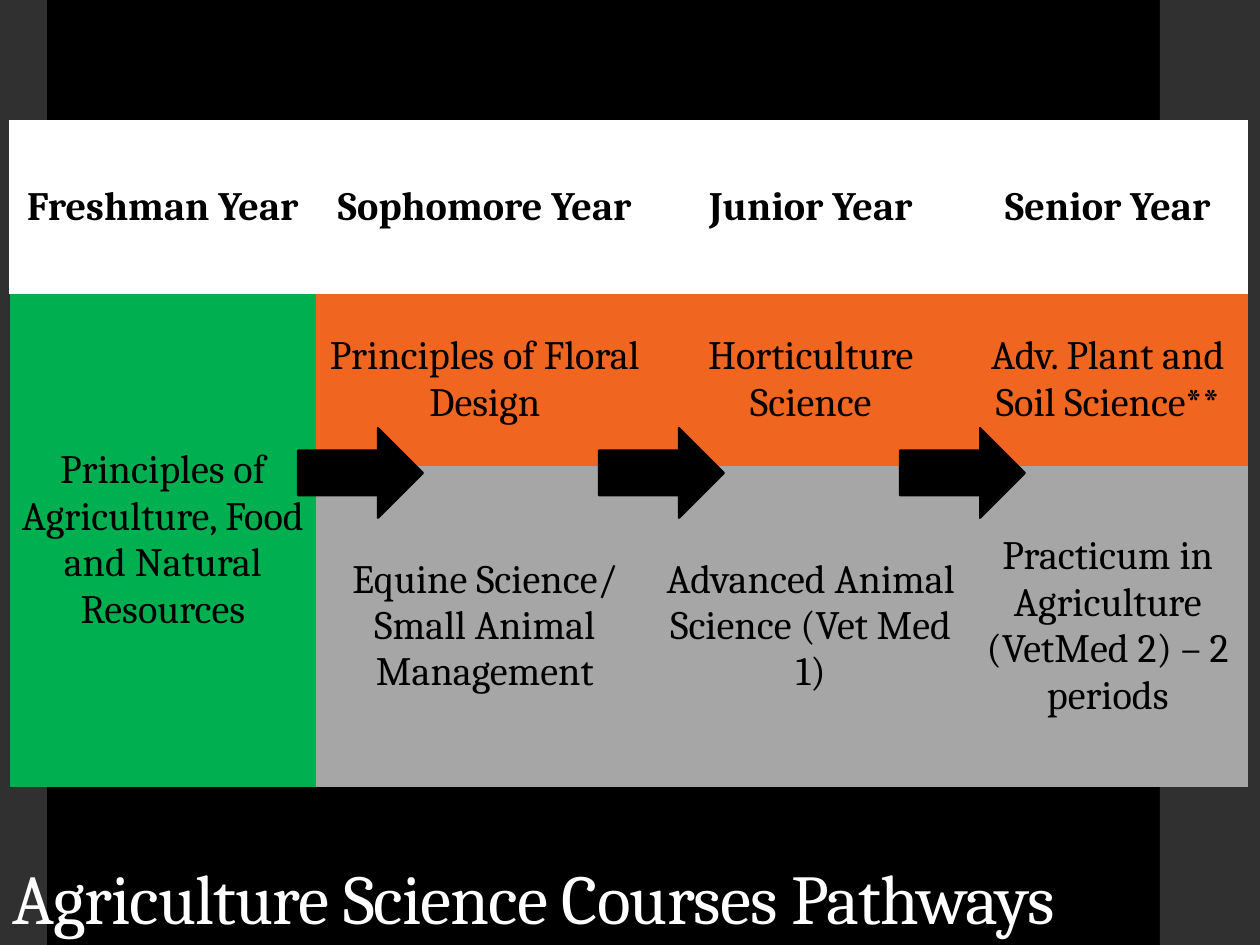
from dataclasses import dataclass

import lxml.etree
import pptx
import pptx.dml.color
import pptx.enum.shapes
import pptx.enum.text
import pptx.oxml.ns
import pptx.util

SCALE = 914400 / 126
SHAPE = pptx.enum.shapes.MSO_SHAPE
ALIGN = pptx.enum.text.PP_ALIGN
ANCHOR = pptx.enum.text.MSO_ANCHOR
NO_STYLE = "{2D5ABB26-0587-4C30-8999-92F81FD0307C}"

WHITE, BLACK, DARK = "FFFFFF", "000000", "303030"
GREEN, ORANGE, GRAY = "00B050", "F06621", "A6A6A6"


@dataclass
class Box:
    left: int
    top: int
    width: int
    height: int


@dataclass
class Row:
    height: int
    fill: str
    texts: list[str]
    bold: bool = False


COLS = [306, 338, 314, 280]
ROWS = [
    Row(173, WHITE, ["Freshman Year", "Sophomore Year", "Junior Year", "Senior Year"], True),
    Row(172, ORANGE, ["Principles of Agriculture, Food and Natural Resources",
                      "Principles of Floral Design", "Horticulture Science",
                      "Adv. Plant and Soil Science**"]),
    Row(321, GRAY, ["", "Equine Science/ Small Animal Management",
                    "Advanced Animal Science (Vet Med 1)",
                    "Practicum in Agriculture (VetMed 2) – 2 periods"]),
]
BARS = [Box(1160, 0, 101, 945), Box(1166, 0, 94, 945), Box(0, 0, 47, 945)]
ARROWS = [Box(298 + 301 * i, 428, 125, 90) for i in range(3)]


def px(n: int) -> pptx.util.Emu:
    return pptx.util.Emu(round(n * SCALE))


def place(box: Box) -> list[pptx.util.Emu]:
    return [px(n) for n in (box.left, box.top, box.width, box.height)]


def paint(fill, color: str) -> None:
    fill.solid()
    fill.fore_color.rgb = pptx.dml.color.RGBColor.from_string(color)


def write(frame, text: str, *, size: int, color: str = BLACK, bold: bool = False,
          align=ALIGN.LEFT, space: float = 1.0, track: int = 0) -> None:
    """Fill a frame with one run; track is in hundredths of a point."""
    frame.word_wrap = True
    par = frame.paragraphs[0]
    par.alignment = align
    par.line_spacing = space
    run = par.add_run()
    run.text = text
    font = run.font
    font.name, font.size, font.bold = "Cambria", pptx.util.Pt(size), bold
    paint(font.fill, color)
    if track:
        font._element.set("spc", str(track))


def draw(slide, kind, box: Box, color: str, line: float = 0) -> None:
    shape = slide.shapes.add_shape(kind, *place(box))
    shape.shadow.inherit = False
    paint(shape.fill, color)
    if line:
        paint(shape.line.fill, color)
        shape.line.width = pptx.util.Pt(line)
    else:
        shape.line.fill.background()


def edge(cell, sides: list[str]) -> None:
    """Put white borders on the sides named, before the cell's fill."""
    props = cell._tc.get_or_add_tcPr()
    for i, side in enumerate(sides):
        line = lxml.etree.Element(pptx.oxml.ns.qn(f"a:ln{side}"), w="9525")
        fill = lxml.etree.SubElement(line, pptx.oxml.ns.qn("a:solidFill"))
        lxml.etree.SubElement(fill, pptx.oxml.ns.qn("a:srgbClr"), val=WHITE)
        props.insert(i, line)


def grid(slide) -> None:
    box = Box(10, 121, sum(COLS), sum(row.height for row in ROWS))
    table = slide.shapes.add_table(len(ROWS), len(COLS), *place(box)).table
    table._tbl.tblPr.find(pptx.oxml.ns.qn("a:tableStyleId")).text = NO_STYLE
    for col, width in zip(table.columns, COLS):
        col.width = px(width)
    table.cell(1, 0).merge(table.cell(2, 0))
    last = len(COLS) - 1
    for r, row in enumerate(ROWS):
        table.rows[r].height = px(row.height)
        for c, text in enumerate(row.texts):
            cell = table.cell(r, c)
            paint(cell.fill, GREEN if r and not c else row.fill)
            cell.vertical_anchor = ANCHOR.MIDDLE
            cell.margin_left = cell.margin_right = pptx.util.Inches(0.09)
            cell.margin_top = cell.margin_bottom = pptx.util.Inches(0.04)
            if text:
                write(cell.text_frame, text, size=23, bold=row.bold, align=ALIGN.CENTER)
            if r == 0:
                edge(cell, ["L"] * (c == 0) + ["R"] * (c == last) + ["T"])


def main() -> None:
    deck = pptx.Presentation()
    deck.slide_width, deck.slide_height = px(1260), px(945)
    slide = deck.slides.add_slide(deck.slide_layouts[6])
    paint(slide.background.fill, BLACK)
    for bar in BARS:
        draw(slide, SHAPE.RECTANGLE, bar, DARK)
    title = slide.shapes.add_textbox(*place(Box(0, 786, 1260, 159))).text_frame
    title.vertical_anchor = ANCHOR.BOTTOM
    write(title, "Agriculture Science Courses Pathways", size=40, color=WHITE,
          space=0.85, track=-50)
    grid(slide)
    for arrow in ARROWS:
        draw(slide, SHAPE.RIGHT_ARROW, arrow, BLACK, 1.1)
    deck.save("out.pptx")


if __name__ == "__main__":
    main()
